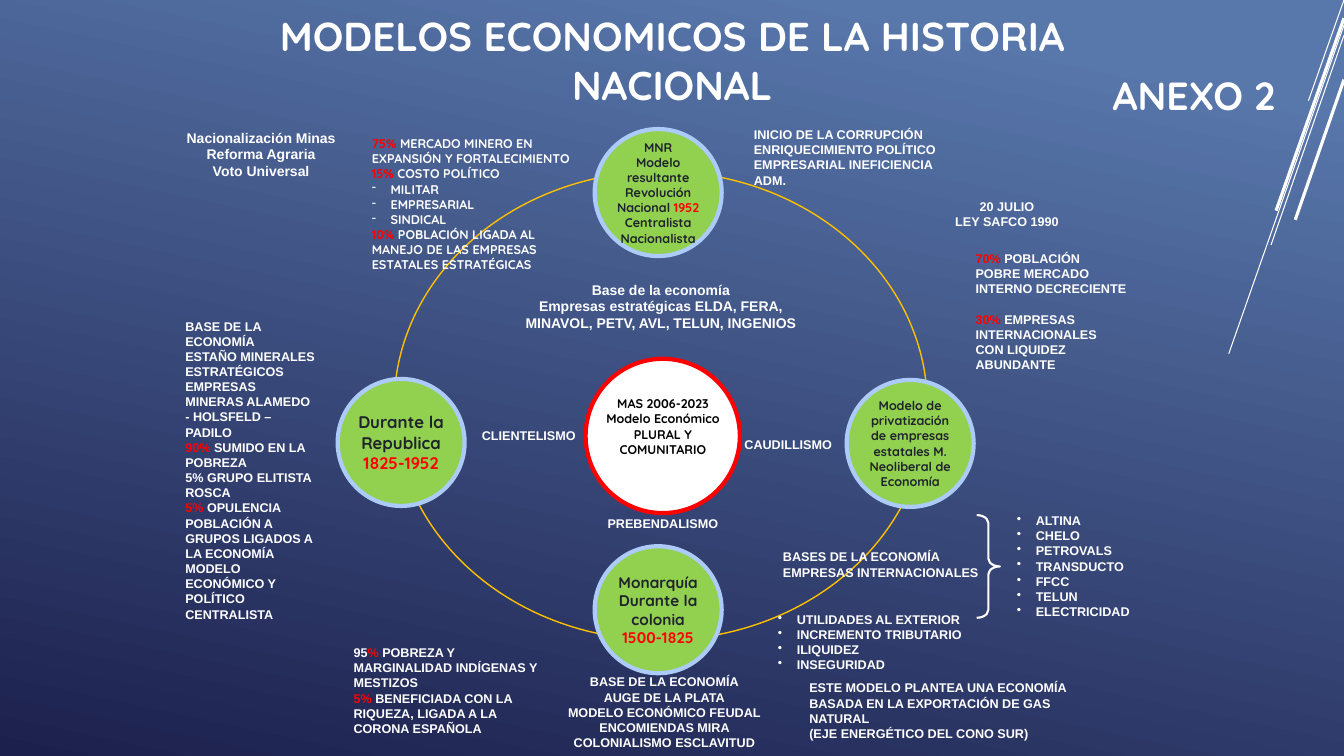
import lxml.etree
import pptx
import pptx.dml.color
import pptx.enum.shapes
import pptx.enum.text
import pptx.oxml.ns
import pptx.util

Pt = pptx.util.Pt
RGBColor = pptx.dml.color.RGBColor
Shapes = pptx.enum.shapes.MSO_SHAPE
Align = pptx.enum.text.PP_ALIGN
Anchor = pptx.enum.text.MSO_ANCHOR

WHITE = RGBColor(0xFF, 0xFF, 0xFF)
BLACK = RGBColor(0, 0, 0)
RED = RGBColor(0xFF, 0, 0)
GREEN = RGBColor(0x92, 0xD0, 0x50)
PALE_BLUE = RGBColor(0xAC, 0xCB, 0xF9)
AMBER = RGBColor(0xFF, 0xC0, 0)
DARK = RGBColor(0x1E, 0x23, 0x2C)
SKY = RGBColor(0x58, 0x77, 0xAB)
NIGHT = RGBColor(0x1C, 0x20, 0x4D)

HEADING = "Quicksand"
BODY = "Arial"
NODE_SIZE = 90.7
INDENT = 13.5

RAYS = [
    (960, 0, 934.6, 72, 0.75),
    (960, 18, 877.7, 252.7, 0.75),
    (960, 25.2, 907.9, 175, 0.75),
    (960, 13, 911.5, 150.5, 2.25),
    (960, 56.9, 925.2, 157.0, 2.25),
]

NODES = [
    (424.8, 92.2, 9, ["MNR", "Modelo resultante Revolución Nacional |1952|",
                      "Centralista Nacionalista"]),
    (604.8, 271.4, 9, ["Modelo de privatización de empresas estatales M. Neoliberal de Economía"]),
    (424.8, 390.2, 11, ["Monarquía", "Durante la colonia", "|1500-1825|"]),
    (241.2, 270.7, 12, ["Durante la Republica", "|1825-1952|"]),
]

CENTERED = {"alignment": Align.CENTER}
NOTES = [
    ((107.3, 88.6, 158.4, 43.9),
     ["Nacionalización Minas", "Reforma Agraria", "Voto Universal"],
     {"size": 10, **CENTERED}),
    ((125.3, 223.9, 107.3, 247),
     ["BASE DE LA ECONOMÍA", "ESTAÑO MINERALES ESTRATÉGICOS",
      "EMPRESAS MINERAS ALAMEDO - HOLSFELD – PADILO",
      "|90% |SUMIDO EN LA POBREZA", "5% GRUPO ELITISTA ROSCA",
      "|5% |OPULENCIA POBLACIÓN A GRUPOS LIGADOS A LA ECONOMÍA",
      "MODELO ECONÓMICO Y POLÍTICO CENTRALISTA"], {}),
    ((258.5, 93.6, 158.4, 105.1),
     ["|75%| MERCADO MINERO EN EXPANSIÓN Y FORTALECIMIENTO", "|15%| COSTO POLÍTICO",
      "MILITAR", "EMPRESARIAL", "SINDICAL",
      "|10%| POBLACIÓN LIGADA AL MANEJO DE LAS EMPRESAS ESTATALES ESTRATÉGICAS"],
     {"font": HEADING, "bullet": "-", "bulleted": range(2, 5)}),
    ((531.4, 87.1, 158.4, 51.1),
     ["INICIO DE LA CORRUPCIÓN", "ENRIQUECIMIENTO POLÍTICO",
      "EMPRESARIAL INEFICIENCIA ADM."], {}),
    ((409, 279.4, 128.9, 51.1),
     ["MAS 2006-2023", "Modelo Económico", "PLURAL Y", "COMUNITARIO"],
     {"font": HEADING, "color": BLACK, **CENTERED}),
    ((552.2, 388.8, 158.4, 28.8),
     ["BASES DE LA ECONOMÍA", "EMPRESAS INTERNACIONALES"], {}),
    ((245.5, 457.2, 158.4, 72.7),
     ["95|%| POBREZA Y MARGINALIDAD INDÍGENAS Y MESTIZOS",
      "|5% |BENEFICIADA CON LA RIQUEZA, LIGADA A LA CORONA ESPAÑOLA"], {}),
    ((719.3, 362.9, 97.2, 83.5),
     ["ALTINA", "CHELO", "PETROVALS", "TRANSDUCTO", "FFCC", "TELUN", "ELECTRICIDAD"],
     {"bullet": "•", "bulleted": range(7)}),
    ((548.6, 433.4, 158.4, 51.1),
     ["UTILIDADES AL EXTERIOR", "INCREMENTO TRIBUTARIO", "ILIQUIDEZ", "INSEGURIDAD"],
     {"bullet": "•", "bulleted": range(4)}),
    ((571, 482.4, 204.5, 51.1),
     ["ESTE MODELO PLANTEA UNA ECONOMÍA BASADA EN LA EXPORTACIÓN DE GAS NATURAL",
      "(EJE ENERGÉTICO DEL CONO SUR)"], {}),
    ((395.3, 478.1, 158.4, 61.9),
     ["BASE DE LA ECONOMÍA", "AUGE DE LA PLATA", "MODELO ECONÓMICO FEUDAL",
      "ENCOMIENDAS MIRA COLONIALISMO ESCLAVITUD"], CENTERED),
    ((689.8, 175.7, 122.4, 105.1),
     ["|70%| POBLACIÓN POBRE MERCADO INTERNO DECRECIENTE",
      "|30%| EMPRESAS INTERNACIONALES CON LIQUIDEZ ABUNDANTE"], {"gap": 11}),
    ((658.1, 138.2, 122.4, 39.6), ["20 JULIO", "LEY SAFCO 1990"], CENTERED),
    ((360.7, 197.3, 222.5, 54.7),
     ["Base de la economía",
      "Empresas estratégicas ELDA, FERA, MINAVOL, PETV, AVL, TELUN, INGENIOS"],
     {"size": 10, **CENTERED}),
    ((423.4, 365, 100.1, 28.8), ["PREBENDALISMO"], CENTERED),
    ((519.8, 308.2, 86.4, 28.8), ["CAUDILLISMO"], CENTERED),
    ((333.4, 302.4, 88.6, 28.8), ["CLIENTELISMO"], CENTERED),
    ((787.7, 47.5, 172.1, 41), ["ANEXO 2"], {"size": 28, "font": HEADING}),
]


def set_attributes(target, values):
    for name, value in values.items():
        setattr(target, name, value)


def add_bullet(paragraph, character):
    properties = paragraph._p.get_or_add_pPr()
    properties.set("marL", str(Pt(INDENT)))
    properties.set("indent", str(-Pt(INDENT)))
    bullet = lxml.etree.SubElement(properties, pptx.oxml.ns.qn("a:buChar"))
    bullet.set("char", character)


def write_text(frame, lines, size=9, font=BODY, color=WHITE, alignment=Align.LEFT,
               gap=0, bullet="", bulleted=()):
    set_attributes(frame, {"word_wrap": True, "auto_size": pptx.enum.text.MSO_AUTO_SIZE.NONE})
    for index, line in enumerate(lines):
        paragraph = frame.add_paragraph() if index else frame.paragraphs[0]
        set_attributes(paragraph, {"alignment": alignment,
                                   "space_before": Pt(gap if index else 0)})
        if index in bulleted:
            add_bullet(paragraph, bullet)
        for part, text in enumerate(line.split("|")):
            if text:
                run = paragraph.add_run()
                run.text = text
                set_attributes(run.font, {"size": Pt(size), "name": font, "bold": True})
                run.font.color.rgb = RED if part % 2 else color


def add_outline(slide, kind, box, line_color, width, fill=None):
    shape = slide.shapes.add_shape(kind, *map(Pt, box))
    shape.shadow.inherit = False
    if fill is None:
        shape.fill.background()
    else:
        shape.fill.solid()
        shape.fill.fore_color.rgb = fill
    shape.line.color.rgb = line_color
    shape.line.width = Pt(width)
    return shape


def add_ray(slide, start_x, start_y, end_x, end_y, width):
    ray = slide.shapes.add_connector(pptx.enum.shapes.MSO_CONNECTOR.STRAIGHT,
                                     Pt(start_x), Pt(start_y), Pt(end_x), Pt(end_y))
    ray.line.color.rgb = WHITE
    ray.line.width = Pt(width)
    lxml.etree.SubElement(ray._element.spPr, pptx.oxml.ns.qn("a:effectLst"))


def add_node(slide, left, top, size, lines):
    node = add_outline(slide, Shapes.OVAL, (left, top, NODE_SIZE, NODE_SIZE),
                       PALE_BLUE, 3, GREEN)
    frame = node.text_frame
    set_attributes(frame, {"margin_left": 0, "margin_right": 0, "margin_top": 0,
                           "margin_bottom": 0, "vertical_anchor": Anchor.MIDDLE})
    write_text(frame, lines, size, HEADING, DARK, Align.CENTER)


def add_note(slide, box, lines, style):
    write_text(slide.shapes.add_textbox(*map(Pt, box)).text_frame, lines, **style)


def set_background(slide):
    fill = slide.background.fill
    fill.gradient()
    fill.gradient_angle = 258
    for stop, position, color in zip(fill.gradient_stops, (0.1, 1), (SKY, NIGHT)):
        stop.position = position
        stop.color.rgb = color


def set_title(slide):
    title = slide.shapes.title
    set_attributes(title, {"left": Pt(156.2), "top": Pt(12.2),
                           "width": Pt(648), "height": Pt(61.2)})
    title.text_frame.vertical_anchor = Anchor.MIDDLE
    write_text(title.text_frame, ["MODELOS ECONOMICOS DE LA HISTORIA NACIONAL"],
               28.8, HEADING, alignment=Align.CENTER)


def main():
    presentation = pptx.Presentation()
    set_attributes(presentation, {"slide_width": Pt(960), "slide_height": Pt(540)})
    slide = presentation.slides.add_slide(presentation.slide_layouts[5])
    set_background(slide)
    set_title(slide)
    for ray in RAYS:
        add_ray(slide, *ray)
    add_outline(slide, Shapes.OVAL, (281.5, 122.4, 380.9, 334.8), AMBER, 1)
    for node in NODES:
        add_node(slide, *node)
    add_outline(slide, Shapes.OVAL, (418.3, 256.3, 110.2, 110.2), RED, 3, WHITE)
    brace = add_outline(slide, Shapes.RIGHT_BRACE, (697.7, 367.9, 16.6, 73.4), WHITE, 1.5)
    brace.adjustments[0] = 0.34
    for note in NOTES:
        add_note(slide, *note)
    presentation.save("out.pptx")


if __name__ == "__main__":
    main()
